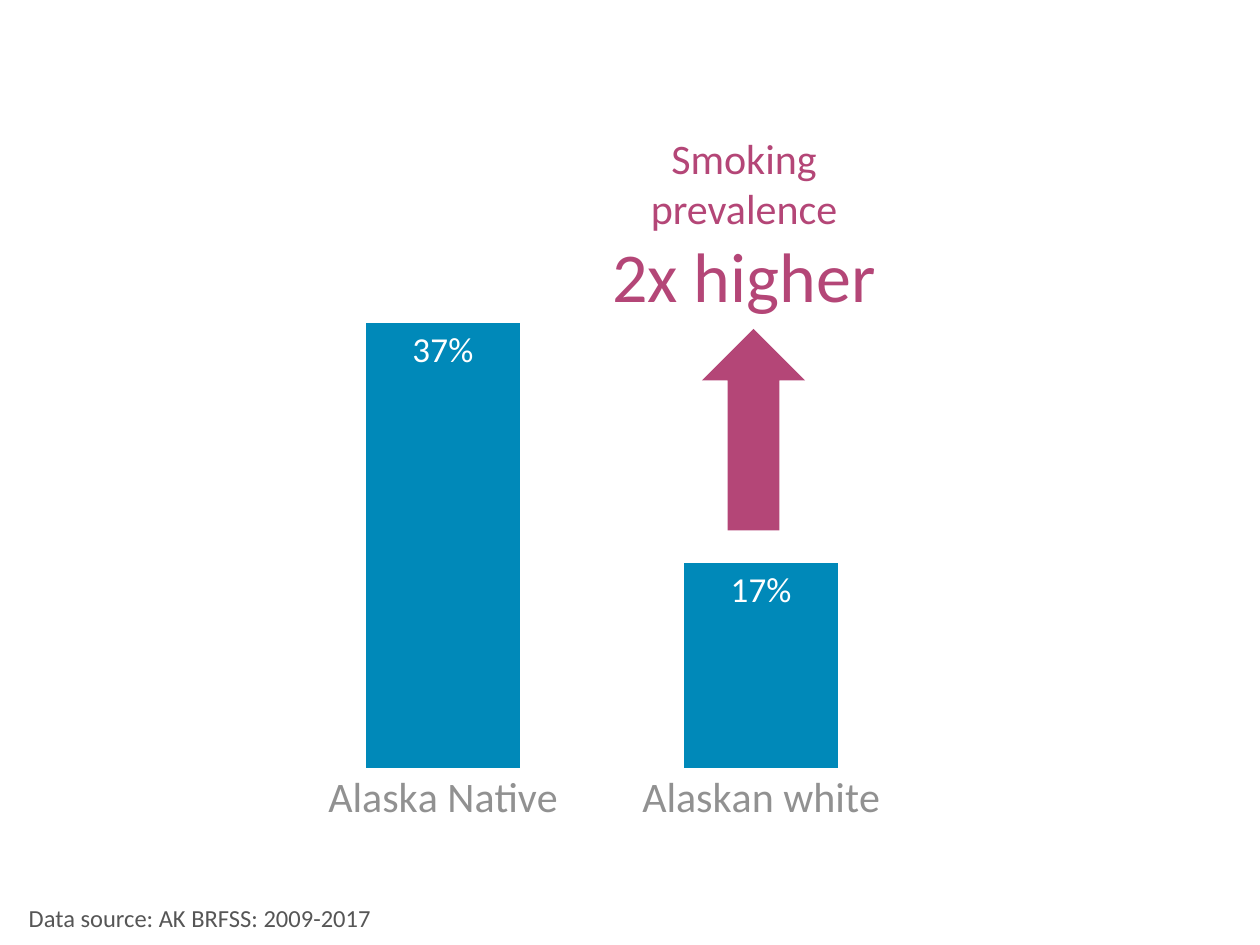
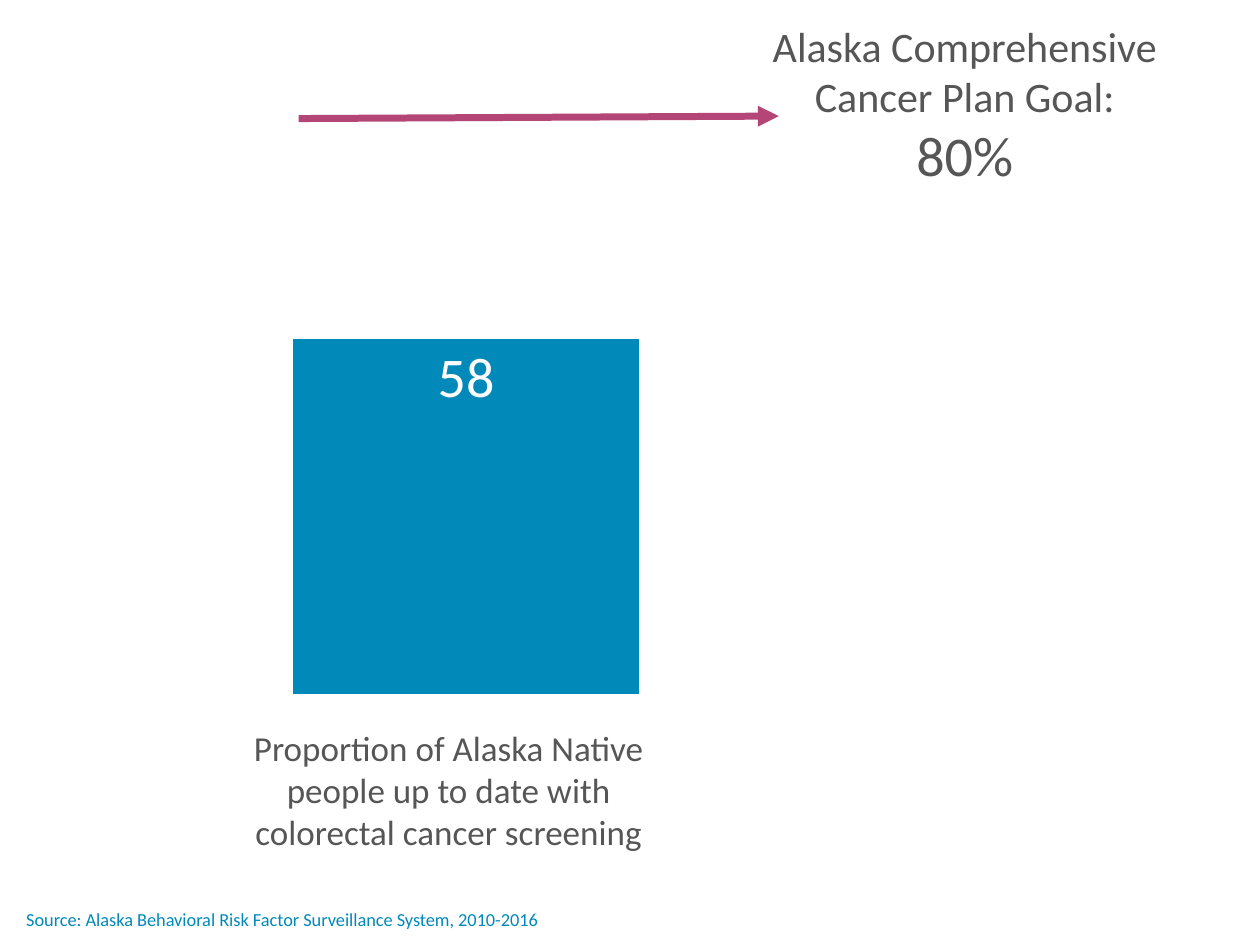
from typing import NamedTuple

import lxml.etree
import pptx
import pptx.chart.data
import pptx.dml.color
import pptx.enum.chart
import pptx.enum.shapes
import pptx.enum.text
import pptx.oxml.ns
import pptx.slide
import pptx.util

Cm = pptx.util.Cm
RGBColor = pptx.dml.color.RGBColor
Align = pptx.enum.text.PP_ALIGN

# Shared style
FONT = "Calibri"
BLUE = RGBColor(0x00, 0x89, 0xB9)
PLUM = RGBColor(0xB4, 0x46, 0x77)
DARK_GREY = RGBColor(0x56, 0x56, 0x56)
LIGHT_GREY = RGBColor(0x91, 0x91, 0x91)
WHITE = RGBColor(0xFF, 0xFF, 0xFF)


class Box(NamedTuple):
    """Left, top, width and height in centimetres."""
    left: float
    top: float
    width: float
    height: float

    def lengths(self) -> list[int]:
        return [Cm(length) for length in self]


class Line(NamedTuple):
    text: str
    size: float


class TextBlock(NamedTuple):
    box: Box
    lines: list[Line]
    color: RGBColor
    align: Align = Align.CENTER


class ColumnChart(NamedTuple):
    box: Box
    values: dict[str, float]
    maximum: float
    gap_width: int
    number_format: str
    label_size: float
    show_categories: bool


def style_font(font, size: float, color: RGBColor) -> None:
    font.name = FONT
    font.size = pptx.util.Pt(size)
    font.color.rgb = color


def add_text(slide: pptx.slide.Slide, block: TextBlock) -> None:
    frame = slide.shapes.add_textbox(*block.box.lengths()).text_frame
    frame.word_wrap = True
    frame.auto_size = pptx.enum.text.MSO_AUTO_SIZE.SHAPE_TO_FIT_TEXT
    for index, line in enumerate(block.lines):
        paragraph = frame.add_paragraph() if index else frame.paragraphs[0]
        paragraph.text = line.text
        paragraph.alignment = block.align
        style_font(paragraph.font, line.size, block.color)


def add_column_chart(slide: pptx.slide.Slide, column_chart: ColumnChart) -> None:
    data = pptx.chart.data.CategoryChartData(column_chart.number_format)
    data.categories = list(column_chart.values)
    data.add_series("Series 1", list(column_chart.values.values()))
    chart = slide.shapes.add_chart(
        pptx.enum.chart.XL_CHART_TYPE.COLUMN_CLUSTERED, *column_chart.box.lengths(), data
    ).chart
    chart.has_legend = False
    chart.has_title = False
    style_font(chart.font, 10, DARK_GREY)

    # Axes
    value_axis = chart.value_axis
    value_axis.visible = False
    value_axis.has_major_gridlines = False
    value_axis.minimum_scale = 0
    value_axis.maximum_scale = column_chart.maximum
    category_axis = chart.category_axis
    category_axis.visible = column_chart.show_categories
    if column_chart.show_categories:
        category_axis.major_tick_mark = pptx.enum.chart.XL_TICK_MARK.NONE
        category_axis.format.line.fill.background()
        style_font(category_axis.tick_labels.font, 24, LIGHT_GREY)

    # Columns and their labels
    plot = chart.plots[0]
    plot.vary_by_categories = False
    plot.gap_width = column_chart.gap_width
    plot.overlap = -27
    series = plot.series[0]
    series.format.fill.solid()
    series.format.fill.fore_color.rgb = BLUE
    labels = series.data_labels
    labels.show_value = True
    labels.position = pptx.enum.chart.XL_LABEL_POSITION.INSIDE_END
    labels.number_format = column_chart.number_format
    labels.number_format_is_linked = False
    style_font(labels.font, column_chart.label_size, WHITE)


def add_upward_arrow(slide: pptx.slide.Slide, box: Box) -> None:
    arrow = slide.shapes.add_shape(
        pptx.enum.shapes.MSO_SHAPE.RIGHT_ARROW, *box.lengths()
    )
    arrow.rotation = 270
    arrow.shadow.inherit = False
    arrow.fill.solid()
    arrow.fill.fore_color.rgb = PLUM
    arrow.line.fill.background()


def add_goal_line(slide: pptx.slide.Slide, start: tuple[float, float],
                  end: tuple[float, float]) -> None:
    connector = slide.shapes.add_connector(
        pptx.enum.shapes.MSO_CONNECTOR.STRAIGHT,
        *[Cm(length) for length in start + end]
    )
    connector.line.color.rgb = PLUM
    connector.line.width = pptx.util.Pt(4)
    qualified = pptx.oxml.ns.qn
    line = connector.line._get_or_add_ln()
    lxml.etree.SubElement(line, qualified("a:tailEnd"), type="triangle")
    lxml.etree.SubElement(connector._element.spPr, qualified("a:effectLst"))


def build_smoking_slide(slide: pptx.slide.Slide) -> None:
    add_column_chart(slide, ColumnChart(
        Box(5.46, 5.56, 13.36, 11.28), {"Alaska Native": 0.37, "Alaskan white": 0.17},
        maximum=0.4, gap_width=106, number_format="0%", label_size=20,
        show_categories=True))
    add_upward_arrow(slide, Box(13.16, 7.62, 4.06, 2.08))
    add_text(slide, TextBlock(
        Box(11.84, 2.54, 6.32, 4.01),
        [Line("Smoking prevalence", 24), Line("2x higher", 40)], PLUM))
    add_text(slide, TextBlock(
        Box(0.33, 18.08, 9.7, 0.86),
        [Line("Data source: AK BRFSS: 2009-2017", 14)], DARK_GREY, Align.LEFT))


def build_screening_slide(slide: pptx.slide.Slide) -> None:
    add_column_chart(slide, ColumnChart(
        Box(3.48, 5.18, 11.84, 8.99), {"1": 58},
        maximum=70, gap_width=63, number_format="General", label_size=32,
        show_categories=False))
    add_goal_line(slide, (6.02, 2.39), (15.7, 2.34))
    add_text(slide, TextBlock(
        Box(15.32, 0.28, 8.26, 4.7),
        [Line("Alaska Comprehensive Cancer Plan Goal:", 24), Line("80%", 32)], DARK_GREY))
    add_text(slide, TextBlock(
        Box(4.22, 14.53, 9.65, 2.82),
        [Line("Proportion of Alaska Native people up to date with "
              "colorectal cancer screening", 20)], DARK_GREY))
    add_text(slide, TextBlock(
        Box(0.28, 18.19, 18.42, 0.74),
        [Line("Source: Alaska Behavioral Risk Factor Surveillance System, 2010-2016", 10.5)],
        BLUE, Align.LEFT))


def main() -> None:
    presentation = pptx.Presentation()
    presentation.slide_width = Cm(25.4)
    presentation.slide_height = Cm(19.05)
    blank_layout = presentation.slide_layouts[6]
    for build_slide in (build_smoking_slide, build_screening_slide):
        build_slide(presentation.slides.add_slide(blank_layout))
    presentation.save("out.pptx")


if __name__ == "__main__":
    main()
